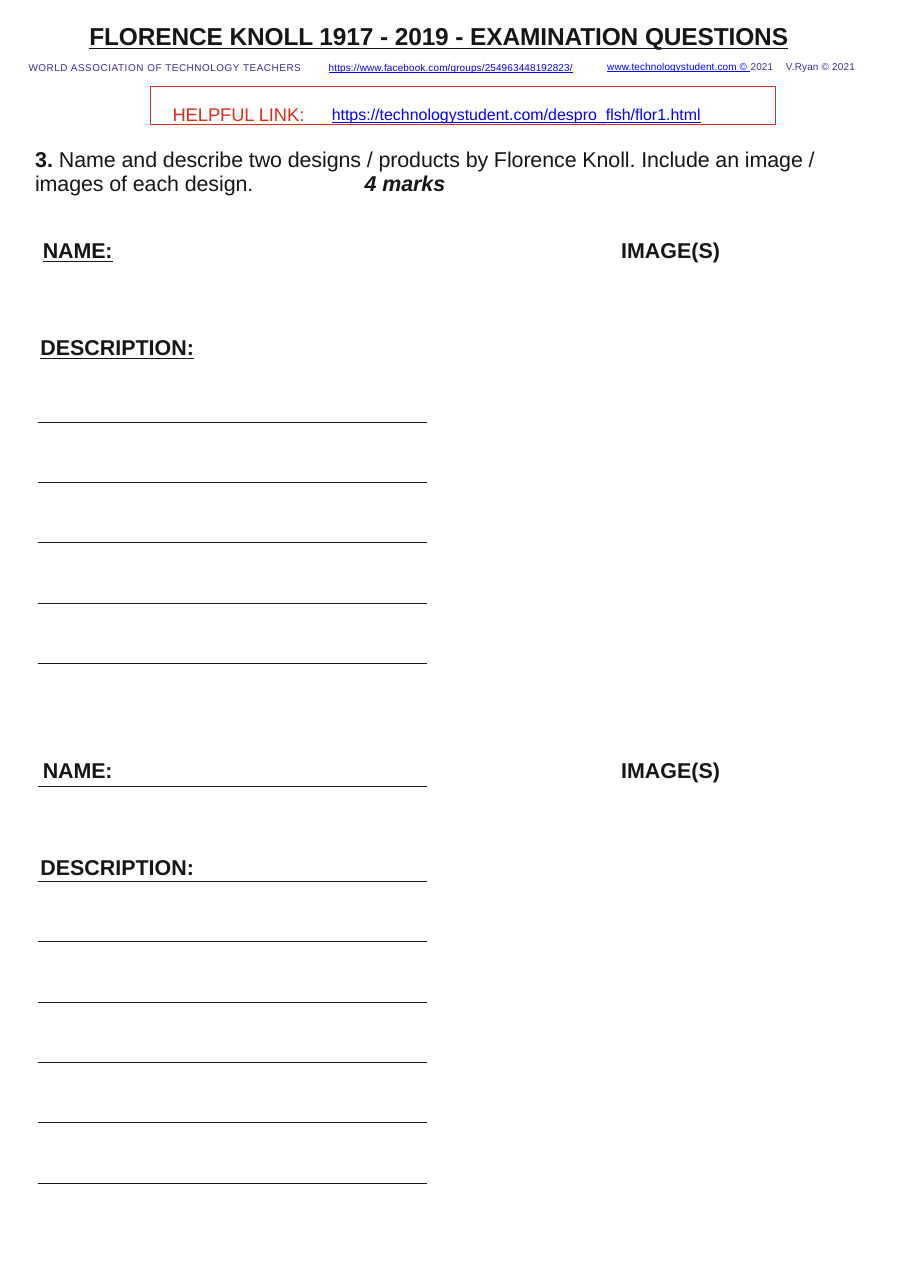
from lxml import etree
from pptx import Presentation
from pptx import util as u
from pptx.dml.color import RGBColor
from pptx.enum import shapes, text
from pptx.oxml.ns import qn

INK = RGBColor(0x15, 0x16, 0x16)
RED = RGBColor(0xDD, 0x2B, 0x1C)
BLUE = RGBColor(0x00, 0x00, 0xFF)
PURPLE = RGBColor(0x3C, 0x2B, 0x98)
FONT = "Arial"
HAIRLINE = u.Pt(0.57)


def write(sp, runs, size, color, bold=None, underline=None, inset=0.03, tab=None):
    """Fill a shape with one paragraph of (text, spacing, font settings) runs."""
    tf = sp.text_frame
    tf.word_wrap = True
    tf.vertical_anchor = text.MSO_ANCHOR.TOP
    tf.margin_left = tf.margin_right = tf.margin_bottom = 0
    tf.margin_top = u.Cm(inset)
    p = tf.paragraphs[0]
    p.alignment = text.PP_ALIGN.LEFT
    if tab:
        tabs = etree.SubElement(p._p.get_or_add_pPr(), qn("a:tabLst"))
        etree.SubElement(tabs, qn("a:tab"), pos=str(u.Cm(tab)), algn="l")
    f = p.font
    f.name, f.size, f.bold, f.underline = FONT, u.Pt(size), bold, underline
    f.color.rgb = color
    for words, spacing, settings in runs:
        r = p.add_run()
        r.text = words
        r._r.get_or_add_rPr().set("spc", str(spacing))
        for name, value in settings.items():
            if name == "color":
                r.font.color.rgb = value
            else:
                setattr(r.font, name, value)
    return p


def add_text(s, x, y, w, h, runs, size, color, **style):
    """Add a text box holding one paragraph."""
    return write(s.shapes.add_textbox(x, y, w, h), runs, size, color, **style)


def add_rule(s, x, y, w):
    """Draw a horizontal writing line."""
    ln = s.shapes.add_connector(shapes.MSO_CONNECTOR.STRAIGHT, x, y, x + w, y)
    ln.line.color.rgb = INK
    ln.line.width = HAIRLINE
    etree.SubElement(ln._element.spPr, qn("a:effectLst"))


def add_header(s, x, y):
    """Place the title, the credits and the boxed link."""
    link = {"color": BLUE, "underline": True}
    add_text(s, x + u.Cm(1.42), y, u.Cm(16.4), u.Cm(0.74),
             [("FLORENCE KNOLL 1917 - 2019 - EXAMINATION QUESTIONS", -5, {})],
             16, INK, bold=True, underline=True)
    add_text(s, x + u.Cm(0.02), y + u.Cm(0.91), u.Cm(12.75), u.Cm(0.36),
             [("WORLD ASSOCIATION OF TECHNOLOGY TEACHERS\t", 37, {}),
              ("https://www.facebook.com/groups/254963448192823/", 10, link)],
             6.5, PURPLE, inset=0.05, tab=6.92)
    add_text(s, x + u.Cm(13.36), y + u.Cm(0.88), u.Cm(6), u.Cm(0.36),
             [("www.technologystudent.com © ", 10, link),
              ("2021\tV.Ryan © 2021", 15, {})],
             6.5, PURPLE, inset=0.05, tab=4.12)
    sp = s.shapes.add_shape(shapes.MSO_SHAPE.RECTANGLE, x + u.Cm(2.84), y + u.Cm(1.54),
                            u.Cm(14.4), u.Cm(0.86))
    sp.shadow.inherit = False
    sp.fill.background()
    sp.line.color.rgb = RED
    sp.line.width = HAIRLINE
    p = write(sp, [("HELPFUL LINK:\t", -5, {}),
                   ("https://technologystudent.com/despro_ﬂsh/ﬂor1.html", 0,
                    {**link, "size": u.Pt(18)})], 12, RED, inset=0.16, tab=3.79)
    sp.text_frame.margin_left = u.Cm(0.5)
    p._p.pPr.find(qn("a:tabLst"))[0].set("pos", str(u.Cm(3.29 + 0.38)))
    p.runs[-1]._r.rPr.set("baseline", "2000")


def add_question(s, x, y):
    """Place the question and its marks."""
    p = add_text(s, x, y, u.Cm(19.4), u.Cm(1.22),
                 [("3. ", 0, {"bold": True}),
                  ("Name and describe two designs / products by Florence Knoll. "
                   "Include an image / images of each design.\t", -8, {}),
                  ("4 marks", -8, {"bold": True, "italic": True})],
                 14, INK, inset=0.08, tab=7.6)
    p.line_spacing = u.Pt(15.6)


def add_answer(s, x, y, ruled):
    """Place one answer area; a ruled one has lines under its labels instead of underlining."""
    width, pitch, first = u.Cm(8.97), u.Cm(1.39), y + u.Cm(2.9)
    labels = [("NAME:", 0.12, 0, -10, not ruled),
              ("DESCRIPTION:", 0.06, 2.24, 0, not ruled),
              ("IMAGE(S)", 13.45, 0, 0, False)]
    for words, dx, dy, spacing, underline in labels:
        add_text(s, x + u.Cm(dx), y + u.Cm(dy), u.Cm(4), u.Cm(0.66),
                 [(words, spacing, {})], 14, INK, bold=True, underline=underline)
    if ruled:
        add_rule(s, x, y + u.Cm(0.71), width)
    for i in range(0 if ruled else 1, 6):
        add_rule(s, x, first + i * pitch, width)


def main():
    """Build the worksheet."""
    prs = Presentation()
    prs.slide_width, prs.slide_height = u.Cm(20.98), u.Cm(29.69)
    s = prs.slides.add_slide(prs.slide_layouts[6])
    add_header(s, u.Cm(0.64), u.Cm(0.46))
    add_question(s, u.Cm(0.81), u.Cm(3.33))
    for top, ruled in ((5.44, False), (17.42, True)):
        add_answer(s, u.Cm(0.87), u.Cm(top), ruled)
    prs.save("out.pptx")


if __name__ == "__main__":
    main()
